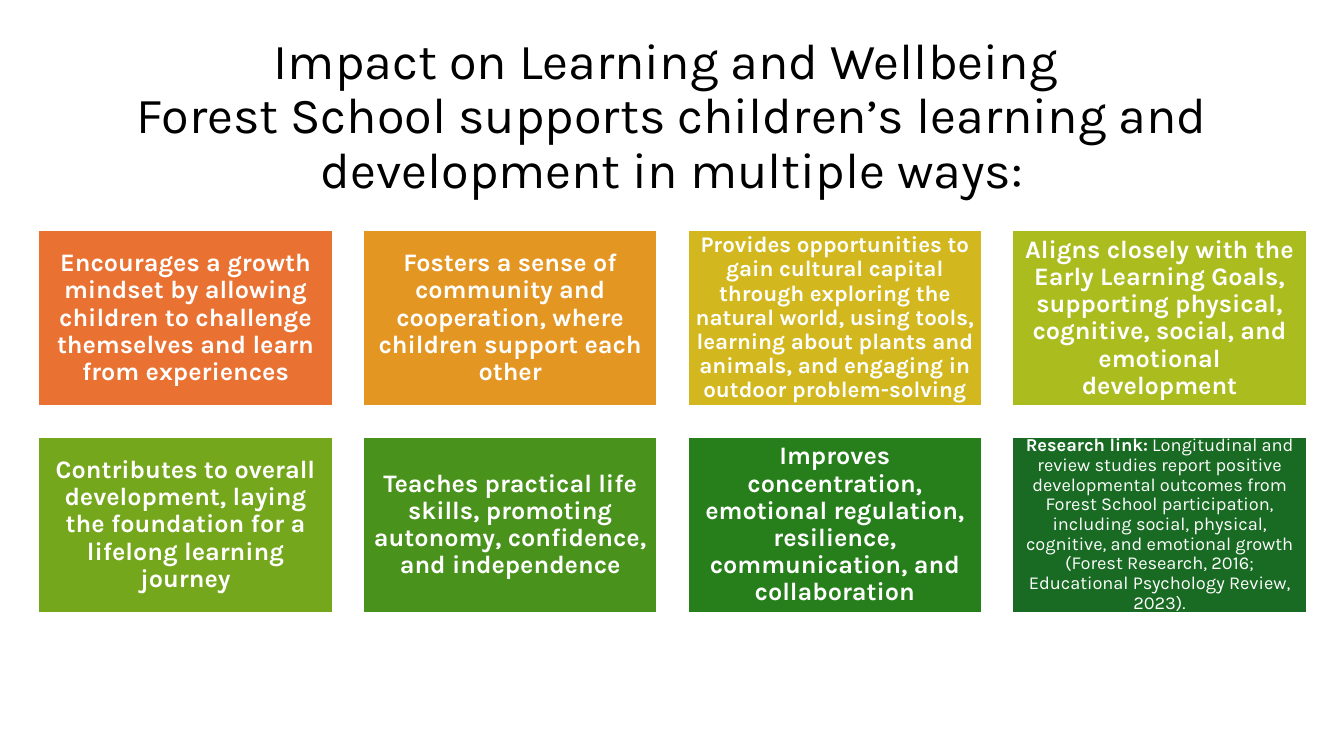
from pptx import Presentation
from pptx import util as u
from pptx.dml.color import RGBColor
from pptx.enum import shapes, text

FONT = "Karla"
BLACK = RGBColor(0x00, 0x00, 0x00)
WHITE = RGBColor(0xFF, 0xFF, 0xFF)
ORANGE = RGBColor(0xE9, 0x71, 0x32)
AMBER = RGBColor(0xE4, 0x96, 0x22)
MUSTARD = RGBColor(0xD2, 0xB8, 0x1E)
LIME = RGBColor(0xAB, 0xBC, 0x1E)
LEAF = RGBColor(0x75, 0xA7, 0x1D)
GRASS = RGBColor(0x49, 0x93, 0x1D)
FOREST = RGBColor(0x27, 0x7F, 0x1B)
PINE = RGBColor(0x19, 0x6B, 0x24)

TITLE = (
    "Impact on Learning and Wellbeing \v"
    "Forest School supports children’s learning and development in multiple ways:"
)

# fmt: off
CARDS = [
    (ORANGE, 18, 0.07, "Encourages a growth mindset by allowing children to challenge themselves and learn from experiences", ""),
    (AMBER, 18, 0.07, "Fosters a sense of community and cooperation, where children support each other", ""),
    (MUSTARD, 16, 0.07, "Provides opportunities to gain cultural capital through exploring the natural world, using tools, learning about plants and animals, and engaging in outdoor problem-solving", ""),
    (LIME, 18, 0.07, "Aligns closely with the Early Learning Goals, supporting physical, cognitive, social, and emotional development", ""),
    (LEAF, 18, 0.07, "Contributes to overall development, laying the foundation for a lifelong learning journey", ""),
    (GRASS, 18, 0.07, "Teaches practical life skills, promoting autonomy, confidence, and independence", ""),
    (FOREST, 18, 0.07, "Improves concentration, emotional regulation, resilience, communication, and collaboration", ""),
    (PINE, 13, 0.05, "Research link:", " Longitudinal and review studies report positive developmental outcomes from Forest School participation, including social, physical, cognitive, and emotional growth (Forest Research, 2016; Educational Psychology Review, 2023)."),
]
# fmt: on

COLUMNS = 4
GRID_LEFT, GRID_TOP = 0.38, 2.28
CARD_WIDTH, CARD_HEIGHT = 2.92, 1.75
GAP = 0.3


def format_paragraph(paragraph, size, color):
    paragraph.alignment = text.PP_ALIGN.CENTER
    paragraph.line_spacing = 0.9
    paragraph.font.name = FONT
    paragraph.font.size = u.Pt(size)
    paragraph.font.color.rgb = color


def add_title(slide):
    title = slide.shapes.title
    title.left, title.top = u.Inches(0.68), u.Inches(0.35)
    title.width, title.height = u.Inches(11.97), u.Inches(1.63)
    frame = title.text_frame
    frame.text = TITLE
    frame.auto_size = text.MSO_AUTO_SIZE.NONE
    frame.vertical_anchor = text.MSO_ANCHOR.MIDDLE
    format_paragraph(frame.paragraphs[0], 36, BLACK)


def add_card(slide, index, fill, size, inset, lead, detail):
    row, column = divmod(index, COLUMNS)
    card = slide.shapes.add_shape(
        shapes.MSO_SHAPE.RECTANGLE,
        u.Inches(GRID_LEFT + column * (CARD_WIDTH + GAP)),
        u.Inches(GRID_TOP + row * (CARD_HEIGHT + GAP)),
        u.Inches(CARD_WIDTH),
        u.Inches(CARD_HEIGHT),
    )
    card.shadow.inherit = False
    card.fill.solid()
    card.fill.fore_color.rgb = fill
    card.line.color.rgb = WHITE
    card.line.width = u.Pt(1.5)
    frame = card.text_frame
    frame.word_wrap = True
    frame.vertical_anchor = text.MSO_ANCHOR.MIDDLE
    frame.margin_left = frame.margin_right = u.Inches(inset)
    frame.margin_top = frame.margin_bottom = u.Inches(inset)
    paragraph = frame.paragraphs[0]
    format_paragraph(paragraph, size, WHITE)
    for words, bold in ((lead, True), (detail, False)):
        if words:
            run = paragraph.add_run()
            run.text = words
            run.font.bold = bold


def main():
    presentation = Presentation()
    presentation.slide_width = u.Inches(13.33)
    presentation.slide_height = u.Inches(7.5)
    slide = presentation.slides.add_slide(presentation.slide_layouts.get_by_name("Title Only"))
    add_title(slide)
    for index, card in enumerate(CARDS):
        add_card(slide, index, *card)
    presentation.save("out.pptx")


if __name__ == "__main__":
    main()
